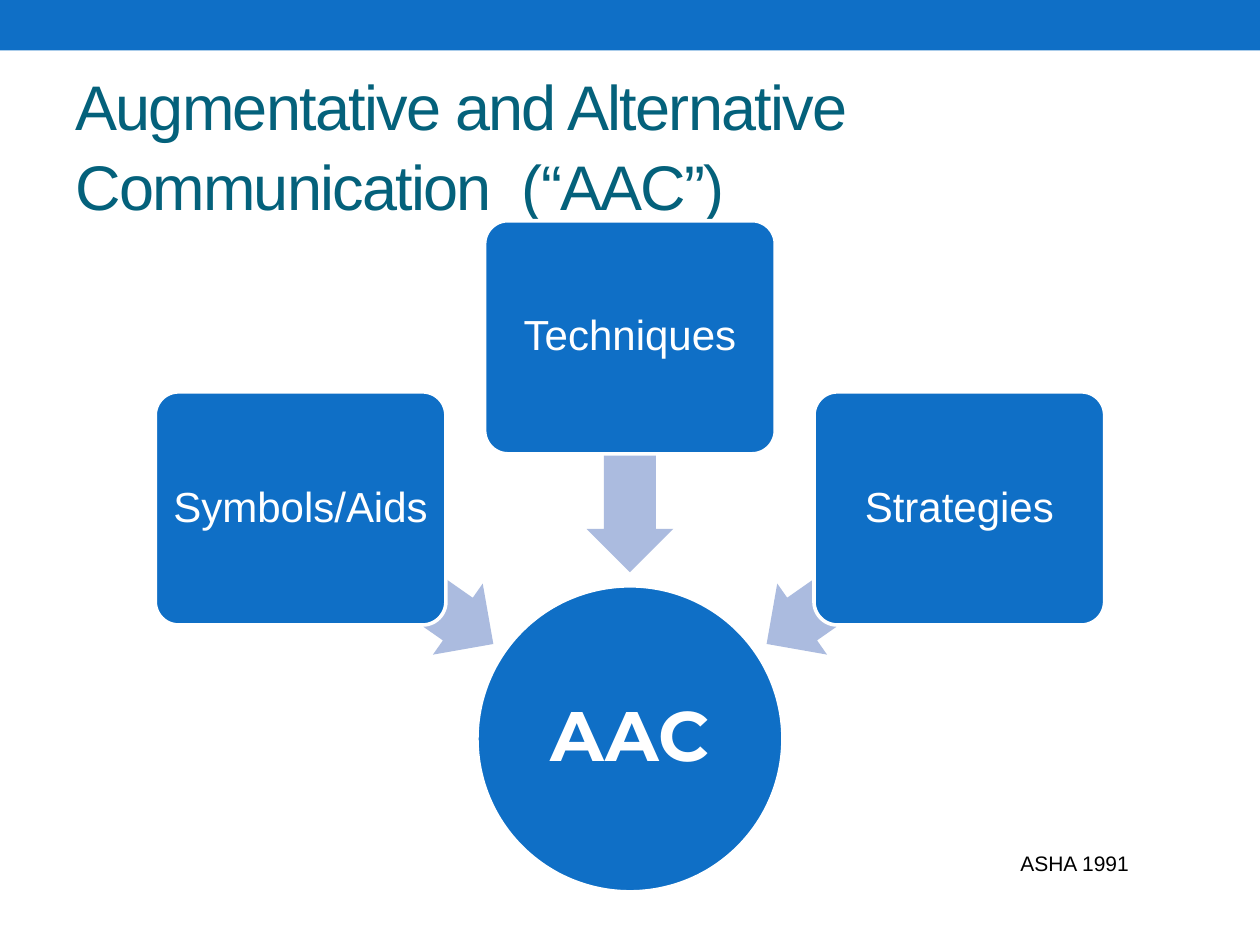
from dataclasses import dataclass

from pptx import Presentation
from pptx.dml.color import RGBColor
from pptx.enum.shapes import MSO_SHAPE as Shape
from pptx.enum.text import MSO_ANCHOR as Anchor, PP_ALIGN as Align
from pptx.util import Cm, Pt

BLUE = RGBColor(0x0F, 0x6F, 0xC6)
LILAC = RGBColor(0xAB, 0xBB, 0xDF)
TEAL = RGBColor(0x04, 0x61, 0x7B)
WHITE = RGBColor(0xFF, 0xFF, 0xFF)
BLACK = RGBColor(0, 0, 0)

CENTER_X = 12.7
BOX_W, BOX_H, BOX_STEP = 5.86, 4.7, 6.64
ARROW_W, ARROW_H, ARROW_STEP = 4.75, 1.75, 4.7
HUB_SIZE, HUB_TOP = 6.17, 11.81


@dataclass
class Component:
    label: str
    column: int  # -1 left, 0 middle, 1 right of the hub
    top: float
    arrow_y: float
    angle: int


COMPONENTS = [
    Component("Symbols/Aids", -1, 7.9, 11.62, 215),
    Component("Techniques", 0, 4.45, 9.16, 270),
    Component("Strategies", 1, 7.9, 11.62, 325),
]


def add_run(p, text: str, size: int, color: RGBColor, font: str = "Arial", bold: bool = False):
    r = p.add_run()
    r.text = text
    r.font.name, r.font.size, r.font.bold = font, Pt(size), bold
    r.font.color.rgb = color
    return r


def add_figure(s, kind: Shape, x: float, y: float, w: float, h: float,
               fill: RGBColor, outlined: bool = False):
    sp = s.shapes.add_shape(kind, Cm(x), Cm(y), Cm(w), Cm(h))
    sp.shadow.inherit = False
    sp.fill.solid()
    sp.fill.fore_color.rgb = fill
    if outlined:
        sp.line.color.rgb = WHITE
        sp.line.width = Pt(2.08)
    else:
        sp.line.fill.background()
    return sp


def add_label(sp, text: str, size: int, inset: float, font: str = "Arial", bold: bool = False) -> None:
    tf = sp.text_frame
    tf.word_wrap = True
    tf.vertical_anchor = Anchor.MIDDLE
    tf.margin_left = tf.margin_right = tf.margin_top = tf.margin_bottom = Cm(inset)
    p = tf.paragraphs[0]
    p.alignment = Align.CENTER
    p.line_spacing = 0.9
    add_run(p, text, size, WHITE, font, bold)


def add_text(s, x: float, y: float, w: float, h: float):
    tf = s.shapes.add_textbox(Cm(x), Cm(y), Cm(w), Cm(h)).text_frame
    tf.word_wrap = True
    return tf


def add_component(s, c: Component) -> None:
    arrow_x = CENTER_X + c.column * ARROW_STEP - ARROW_W / 2
    arrow = add_figure(s, Shape.LEFT_ARROW, arrow_x, c.arrow_y - ARROW_H / 2, ARROW_W, ARROW_H, LILAC)
    arrow.adjustments[0], arrow.adjustments[1] = 0.6, 0.5
    arrow.rotation = c.angle

    box_x = CENTER_X + c.column * BOX_STEP - BOX_W / 2
    box = add_figure(s, Shape.ROUNDED_RECTANGLE, box_x, c.top, BOX_W, BOX_H, BLUE, outlined=True)
    box.adjustments[0] = 0.1
    add_label(box, c.label, 24, 0.12)


def main() -> None:
    prs = Presentation()
    prs.slide_width, prs.slide_height = Cm(25.4), Cm(19.05)
    s = prs.slides.add_slide(prs.slide_layouts[6])

    # Top band and title
    add_figure(s, Shape.RECTANGLE, 0, 0, 25.4, 1.02, BLUE)
    tf = add_text(s, 1.27, 1.52, 22.86, 2.74)
    tf.vertical_anchor = Anchor.MIDDLE
    p = tf.paragraphs[0]
    p.line_spacing = 1.05
    r = add_run(p, "Augmentative and Alternative Communication  (“AAC”)", 36, TEAL)
    r.font._element.set("spc", "-100")

    # Hub with the components pointing at it
    hub = add_figure(s, Shape.OVAL, CENTER_X - HUB_SIZE / 2, HUB_TOP, HUB_SIZE, HUB_SIZE,
                     BLUE, outlined=True)
    add_label(hub, "AAC", 40, 0.08, "Montserrat", bold=True)
    for c in COMPONENTS:
        add_component(s, c)

    # Source
    tf = add_text(s, 20.32, 17.02, 4.01, 0.76)
    add_run(tf.paragraphs[0], "ASHA 1991", 12, BLACK)

    prs.save("out.pptx")


if __name__ == "__main__":
    main()
